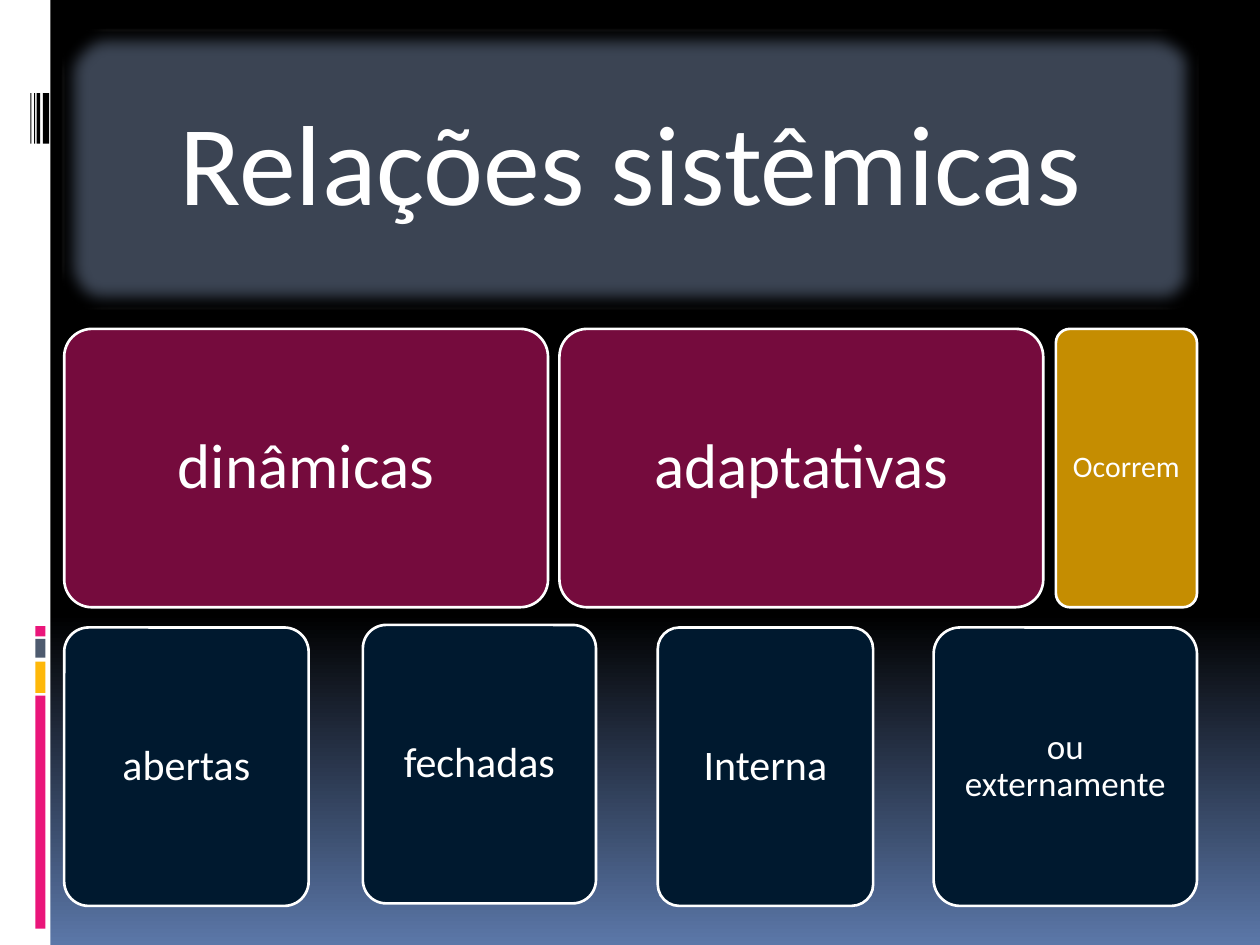
"""Build the slide on systemic relations: a soft-edged title above two rows of boxes."""
from copy import deepcopy

from lxml.etree import SubElement
from pptx import Presentation
from pptx.dml.color import RGBColor
from pptx.enum.shapes import MSO_SHAPE
from pptx.enum.text import MSO_ANCHOR, PP_ALIGN
from pptx.oxml.ns import qn
from pptx.util import Inches, Pt


def color(value):
    return RGBColor.from_string(value)


def add_box(page, kind, place, fill):
    box = page.shapes.add_shape(kind, *[Inches(length) for length in place])
    box.shadow.inherit = False
    box.fill.solid()
    box.fill.fore_color.rgb = color(fill)
    box.line.fill.background()
    return box


deck = Presentation()
deck.slide_width, deck.slide_height = Inches(10), Inches(7.5)
page = deck.slides.add_slide(deck.slide_layouts[5])

backdrop = page.background.fill
backdrop.gradient()
backdrop.gradient_angle = 270
first_stop = page.element.find(".//" + qn("a:gs"))
first_stop.addnext(deepcopy(first_stop))
for stop, position, shade in zip(backdrop.gradient_stops, (0, 0.65, 1), ("000000", "000000", "5B77A8")):
    stop.position = position
    stop.color.rgb = color(shade)

decorations = [
    (0, 0, 0.4, 7.5, "FFFFFF"),
    (0.28, 5.52, 0.08, 1.85, "EA157A"),
    (0.28, 5.25, 0.08, 0.25, "FEB80A"),
    (0.28, 5.07, 0.08, 0.15, "4E5B6F"),
    (0.28, 4.97, 0.08, 0.08, "EA157A"),
    (0.34, 0.74, 0.05, 0.4, "000000"),
    (0.29, 0.74, 0.03, 0.4, "000000"),
    (0.27, 0.74, 0.01, 0.4, "000000"),
    (0.24, 0.74, 0.01, 0.4, "000000"),
]
for *place, fill in decorations:
    add_box(page, MSO_SHAPE.RECTANGLE, place, fill)

title = page.shapes.title
title.left, title.top, title.width, title.height = [Inches(length) for length in (0.57, 0.3, 8.87, 2.08)]

cards = [
    ("Relações sistêmicas", 0.5, 0.24, 9, "3B4453", 65, 0.27),
    ("dinâmicas", 0.51, 2.61, 3.84, "750B3D", 36, 0.15),
    ("adaptativas", 4.44, 2.61, 3.84, "750B3D", 36, 0.15),
    ("Ocorrem", 8.38, 2.61, 1.12, "C58D01", 17, 0.07),
    ("abertas", 0.51, 4.98, 1.94, "00192F", 24, 0.1),
    ("fechadas", 2.88, 4.96, 1.85, "00192F", 24, 0.1),
    ("Interna", 5.22, 4.98, 1.71, "00192F", 24, 0.1),
    ("ou externamente", 7.41, 4.98, 2.09, "00192F", 20, 0.08),
]
for text, left, top, width, fill, size, inset in cards:
    box = add_box(page, MSO_SHAPE.ROUNDED_RECTANGLE, (left, top, width, 2.21), fill)
    box.adjustments[0] = 0.1
    box.line.color.rgb = color("FFFFFF")
    box.line.width = Pt(1.5)
    holder = box
    if text == "Relações sistêmicas":
        effects = box._element.spPr.find(qn("a:effectLst"))
        SubElement(effects, qn("a:softEdge"), rad=str(Inches(0.12)))
        box._element.addnext(title._element)
        holder = title
    frame = holder.text_frame
    frame.word_wrap = True
    frame.vertical_anchor = MSO_ANCHOR.MIDDLE
    frame.margin_left = frame.margin_right = Inches(inset)
    frame.margin_top = frame.margin_bottom = Inches(inset)
    para = frame.paragraphs[0]
    para.alignment = PP_ALIGN.CENTER
    para.line_spacing = 0.9
    span = para.add_run()
    span.text = text
    span.font.name = "Calibri"
    span.font.size = Pt(size)
    span.font.color.rgb = color("FFFFFF")

deck.save("out.pptx")
